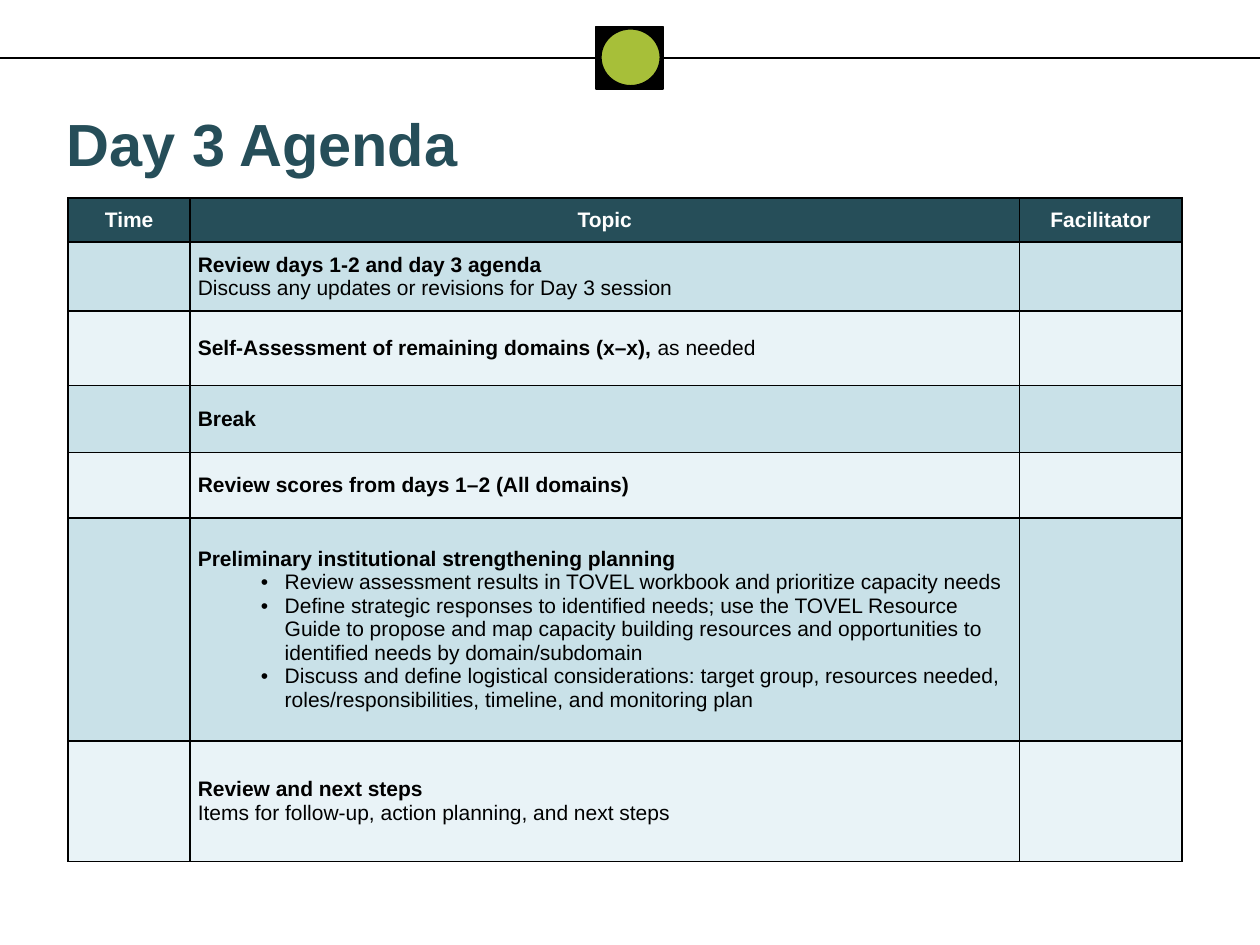
from lxml.etree import SubElement
from pptx import Presentation
from pptx.dml.color import RGBColor
from pptx.enum.shapes import MSO_CONNECTOR, MSO_SHAPE
from pptx.enum.text import MSO_ANCHOR, PP_ALIGN
from pptx.oxml import parse_xml
from pptx.oxml.ns import nsdecls, qn
from pptx.util import Inches, Pt

BLACK = RGBColor(0x00, 0x00, 0x00)
WHITE = RGBColor(0xFF, 0xFF, 0xFF)
LIME = RGBColor(0xA7, 0xBF, 0x39)
TEAL = RGBColor(0x26, 0x4E, 0x59)
BLUE = RGBColor(0xC9, 0xE1, 0xE8)
PALE = RGBColor(0xE9, 0xF3, 0xF7)

COLS = [0.97, 6.58, 1.29]
ROWS = [0.35, 0.55, 0.59, 0.53, 0.52, 1.77, 0.96]
HEADS = ["Time", "Topic", "Facilitator"]
# Each topic: bold lead, plain text on the same line, plain lines, bullets
TOPICS = [
    ("Review days 1-2 and day 3 agenda", "",
     ["Discuss any updates or revisions for Day 3 session"], []),
    ("Self-Assessment of remaining domains (x–x), ", "as needed", [], []),
    ("Break", "", [], []),
    ("Review scores from days 1–2 (All domains)", "", [], []),
    ("Preliminary institutional strengthening planning", "", [], [
        "Review assessment results in TOVEL workbook and prioritize capacity needs",
        "Define strategic responses to identified needs; use the TOVEL Resource "
        "Guide to propose and map capacity building resources and opportunities "
        "to identified needs by domain/subdomain",
        "Discuss and define logistical considerations: target group, resources "
        "needed, roles/responsibilities, timeline, and monitoring plan",
    ]),
    ("Review and next steps", "",
     ["Items for follow-up, action planning, and next steps"], []),
]


def add_run(par, text, color=BLACK, size=12, bold=False):
    run = par.add_run()
    run.text = text
    form = {"name": "Arial", "size": Pt(size), "bold": bold}
    for key, val in form.items():
        setattr(run.font, key, val)
    run.font.color.rgb = color


def style_cell(cell, fill):
    """Set margins, anchor, thin black borders and fill."""
    form = {"vertical_anchor": MSO_ANCHOR.MIDDLE}
    for side in ("left", "right", "top", "bottom"):
        form["margin_" + side] = Inches(0.06)
    for key, val in form.items():
        setattr(cell, key, val)
    props = cell._tc.get_or_add_tcPr()
    for tag in ("lnL", "lnR", "lnT", "lnB"):
        props.append(parse_xml(
            f'<a:{tag} {nsdecls("a")} w="12700"><a:solidFill>'
            f'<a:srgbClr val="{BLACK}"/></a:solidFill></a:{tag}>'))
    cell.fill.solid()
    cell.fill.fore_color.rgb = fill


prs = Presentation()
prs.slide_width, prs.slide_height = Inches(10), Inches(7.5)
slide = prs.slides.add_slide(prs.slide_layouts[5])
shapes = slide.shapes

# Top rule with the round badge
rule = shapes.add_connector(
    MSO_CONNECTOR.STRAIGHT, 0, Inches(0.46), Inches(10), Inches(0.46))
rule.line.color.rgb = BLACK
rule.line.width = Pt(0.75)
SubElement(rule._element.spPr, qn("a:effectLst"))

for kind, box, fill, width in (
    (MSO_SHAPE.RECTANGLE, (4.73, 0.21, 0.53, 0.5), BLACK, 1),
    (MSO_SHAPE.OVAL, (4.77, 0.23, 0.47, 0.45), LIME, 0.75),
):
    badge = shapes.add_shape(kind, *map(Inches, box))
    badge.shadow.inherit = False
    badge.fill.solid()
    badge.fill.fore_color.rgb = fill
    badge.line.color.rgb = BLACK
    badge.line.width = Pt(width)

# Title
title = shapes.title
place = {"left": 0.53, "top": 0.86, "width": 7.47, "height": 0.92}
for key, val in place.items():
    setattr(title, key, Inches(val))
frame = title.text_frame
form = {"margin_left": 0, "vertical_anchor": MSO_ANCHOR.TOP, "word_wrap": True}
for key, val in form.items():
    setattr(frame, key, val)
head = frame.paragraphs[0]
head.alignment = PP_ALIGN.LEFT
head.line_spacing = 0.9
add_run(head, "Day 3 Agenda", TEAL, 34, True)

# Agenda table
table = shapes.add_table(
    len(ROWS), len(COLS), Inches(0.54), Inches(1.57),
    Inches(sum(COLS)), Inches(sum(ROWS))).table
for col, width in zip(table.columns, COLS):
    col.width = Inches(width)
for num, (row, height) in enumerate(zip(table.rows, ROWS)):
    row.height = Inches(height)
    fill = TEAL if num == 0 else BLUE if num % 2 else PALE
    for cell in row.cells:
        style_cell(cell, fill)

for num, text in enumerate(HEADS):
    par = table.cell(0, num).text_frame.paragraphs[0]
    par.alignment = PP_ALIGN.CENTER
    add_run(par, text, WHITE, bold=True)

for num, (lead, rest, lines, items) in enumerate(TOPICS, 1):
    frame = table.cell(num, 1).text_frame
    par = frame.paragraphs[0]
    add_run(par, lead, bold=True)
    if rest:
        add_run(par, rest)
    for text in lines:
        add_run(frame.add_paragraph(), text)
    for text in items:
        par = frame.add_paragraph()
        par.level = 1
        props = par._p.get_or_add_pPr()
        props.set("marL", str(Inches(0.69)))
        props.set("indent", str(Inches(-0.19)))
        SubElement(props, qn("a:buFont"), typeface="Arial")
        SubElement(props, qn("a:buChar"), char="•")
        add_run(par, text)

prs.save("out.pptx")
